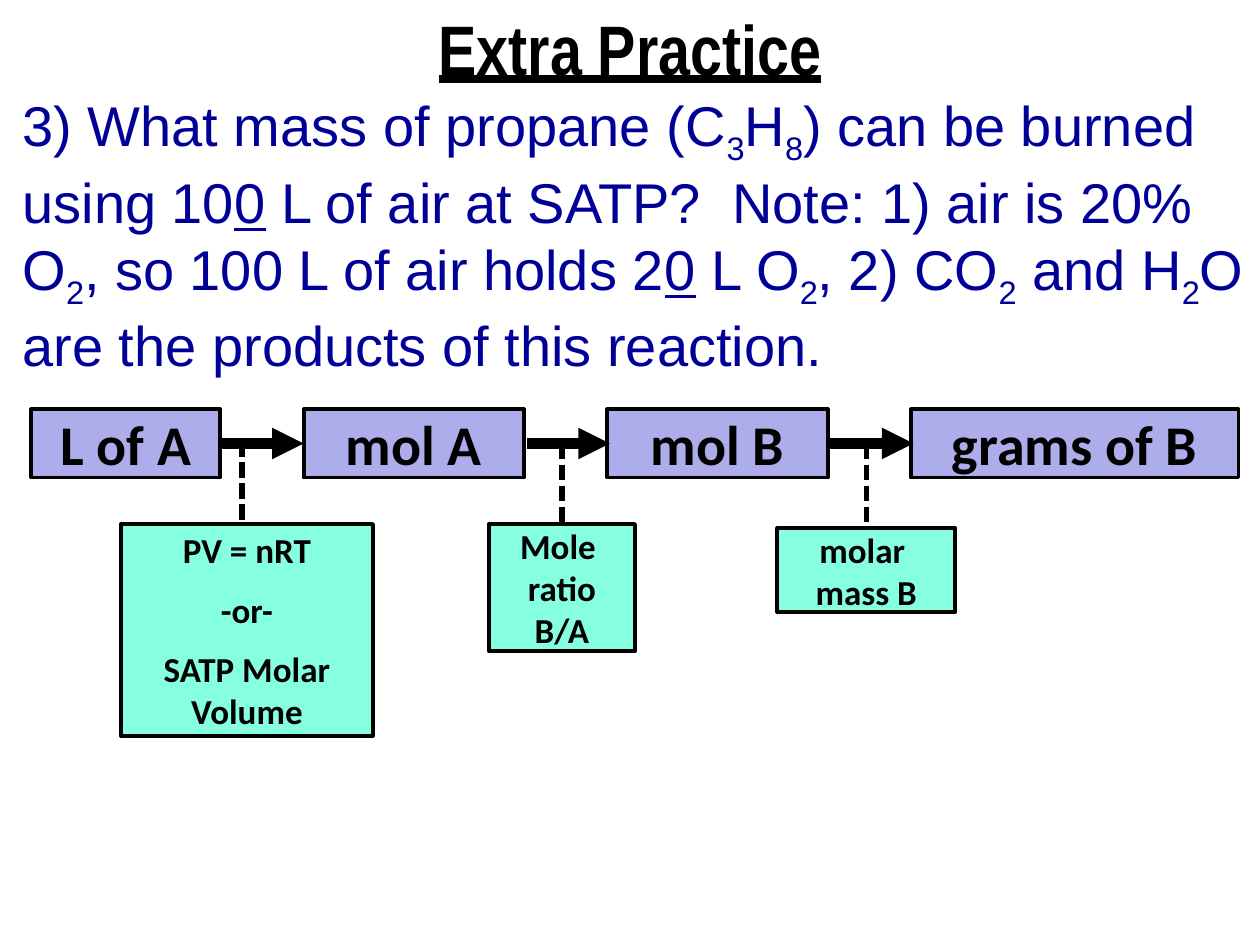
from lxml import etree
from pptx import Presentation
from pptx.dml.color import RGBColor
from pptx.enum import dml, shapes, text
from pptx.oxml.ns import qn
from pptx.util import Inches, Pt

COLORS = {"ink": "000000", "question": "000099", "step": "ADADEB", "method": "85FFE0"}

TITLE = "Extra Practice"
# (text, style) where style is "", "sub" or "under"
QUESTION = [
    ("3) What mass of propane (C", ""), ("3", "sub"), ("H", ""), ("8", "sub"),
    (") can be burned using 10", ""), ("0", "under"),
    (" L of air at SATP?  Note: 1) air is 20% O", ""), ("2", "sub"),
    (", so 100 L of air holds 2", ""), ("0", "under"), (" L O", ""), ("2", "sub"),
    (", 2) CO", ""), ("2", "sub"), (" and H", ""), ("2", "sub"),
    ("O are the products of this reaction.", ""),
]
# (label, left, width)
STEPS = [("L of A", 0.25, 1.5), ("mol A", 2.41, 1.75),
         ("mol B", 4.82, 1.75), ("grams of B", 7.23, 2.6)]
STEP_TOP, STEP_HEIGHT = 3.25, 0.54
# (paragraphs, left, top, width, height); \v is a line break
METHODS = [
    (["molar \vmass B"], 6.17, 4.19, 1.41, 0.67),
    (["Mole \vratio\vB/A"], 3.88, 4.16, 1.16, 1.01),
    (["PV = nRT", "-or-", "SATP Molar Volume"], 0.96, 4.16, 2, 1.68),
]
ARROW_LEFTS, ARROW_LENGTH = [1.75, 4.18, 6.59], 0.66
ARROW_Y = STEP_TOP + STEP_HEIGHT / 2
DOTTED_STARTS, DOTTED_LENGTH = [(1.92, 3.5), (4.46, 3.52), (6.88, 3.52)], 0.64


def rgb(name):
    return RGBColor.from_string(COLORS[name])


def style_run(r, font, size, color, bold=False):
    r.font.name, r.font.size, r.font.bold = font, Pt(size), bold
    r.font.color.rgb = rgb(color)


def add_text_box(slide, left, top, width, height):
    tf = slide.shapes.add_textbox(*map(Inches, (left, top, width, height))).text_frame
    tf.word_wrap = True
    return tf


def add_box(slide, paragraphs, frame, fill, size):
    sp = slide.shapes.add_shape(shapes.MSO_SHAPE.RECTANGLE, *map(Inches, frame))
    sp.shadow.inherit = False
    sp.fill.solid()
    sp.fill.fore_color.rgb = rgb(fill)
    sp.line.color.rgb = rgb("ink")
    sp.line.width = Pt(2.25)
    tf = sp.text_frame
    tf.margin_left = tf.margin_right = tf.margin_top = tf.margin_bottom = 0
    tf.word_wrap = True
    tf.vertical_anchor = text.MSO_ANCHOR.MIDDLE
    tf.text = "\n".join(paragraphs)
    for i, p in enumerate(tf.paragraphs):
        p.alignment = text.PP_ALIGN.CENTER
        p.space_before = Pt(size / 2 if i else 0)
        for r in p.runs:
            style_run(r, "Calibri", size, "ink", bold=True)


def add_line(slide, x1, y1, x2, y2, width):
    line = slide.shapes.add_connector(
        shapes.MSO_CONNECTOR.STRAIGHT, *map(Inches, (x1, y1, x2, y2)))
    line.line.color.rgb = rgb("ink")
    line.line.width = Pt(width)
    etree.SubElement(line._element.spPr, qn("a:effectLst"))
    return line.line


def main():
    prs = Presentation()
    prs.slide_width, prs.slide_height = Inches(10), Inches(7.5)
    slide = prs.slides.add_slide(prs.slide_layouts[6])

    tf = add_text_box(slide, 0, 0, 10, 0.75)
    tf.vertical_anchor = text.MSO_ANCHOR.MIDDLE
    tf.text = TITLE
    p = tf.paragraphs[0]
    p.alignment = text.PP_ALIGN.CENTER
    style_run(p.runs[0], "Arial Narrow", 40, "ink", bold=True)
    p.runs[0].font.underline = True

    p = add_text_box(slide, 0.08, 0.67, 9.92, 6.83).paragraphs[0]
    for words, style in QUESTION:
        r = p.add_run()
        r.text = words
        style_run(r, "Arial", 32, "question")
        if style == "under":
            r.font.underline = True
        elif style == "sub":
            r.font._element.set("baseline", "-25000")

    for label, left, width in STEPS:
        add_box(slide, [label], (left, STEP_TOP, width, STEP_HEIGHT), "step", 32)
    for paragraphs, *frame in METHODS:
        add_box(slide, paragraphs, frame, "method", 20)

    for x in ARROW_LEFTS:
        line = add_line(slide, x, ARROW_Y, x + ARROW_LENGTH, ARROW_Y, 6)
        etree.SubElement(line._get_or_add_ln(), qn("a:tailEnd"), type="triangle")
    for x, y in DOTTED_STARTS:
        line = add_line(slide, x, y, x, y + DOTTED_LENGTH, 3)
        line.dash_style = dml.MSO_LINE.SQUARE_DOT

    prs.save("out.pptx")


if __name__ == "__main__":
    main()
